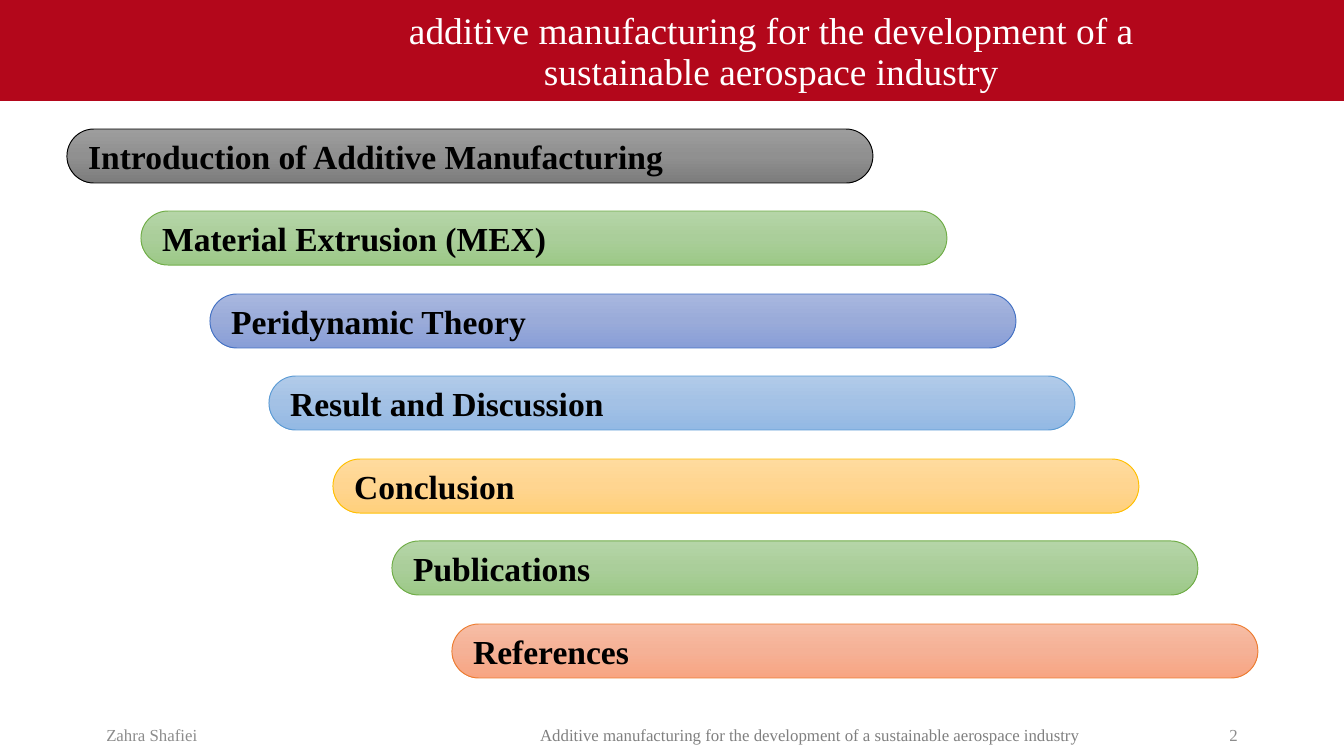
"""Build an agenda slide with a staircase of seven rounded bars."""
from copy import deepcopy

from pptx import Presentation, util as u
from pptx.dml.color import RGBColor
from pptx.enum import shapes, text

PX = 914400 / 134.4
FONT = "Times New Roman"
HEX = {"band": "B3071B", "white": "FFFFFF", "black": "000000",
       "pale": "8C8C8C", "gray": "808080"}
TONES = {
    "gray": ("000000", "9D9D9D", "909090", "7C7C7C"),
    "green": ("70AD47", "B5D5A7", "AACE9A", "9CC987"),
    "blue": ("4472C4", "A8B7DF", "9AABD9", "889ED7"),
    "sky": ("5B9BD5", "B1CBE9", "A3C1E5", "93B9E4"),
    "gold": ("FFC000", "FFDB9E", "FFD590", "FFD07C"),
    "coral": ("ED7D31", "F7BDA5", "F5B196", "F8A582"),
}
TITLE = "additive manufacturing for the development of a sustainable aerospace industry"
BARS = [
    ("Introduction of Additive Manufacturing", 67, "gray"),
    ("Material Extrusion (MEX)", 141, "green"),
    ("Peridynamic Theory", 210, "blue"),
    ("Result and Discussion", 269, "sky"),
    ("Conclusion", 333, "gold"),
    ("Publications", 392, "green"),
    ("References", 452, "coral"),
]
LEFT, MID, RIGHT = text.PP_ALIGN.LEFT, text.PP_ALIGN.CENTER, text.PP_ALIGN.RIGHT
FOOT = [
    ("Zahra Shafiei", 93, 359, LEFT, "pale"),
    ("Additive manufacturing for the development of a sustainable aerospace industry",
     477, 665, MID, "gray"),
    ("2", 1187, 64, RIGHT, "pale"),
]
TOP, LAST, WIDE, HIGH = 129, 624, 806, 54


def emu(*vals):
    return [round(v * PX) for v in vals]


def rgb(code):
    return RGBColor.from_string(code)


def write(shape, words, size, color, align, bold=False):
    frame = shape.text_frame
    frame.text = words
    frame.word_wrap = True
    frame.auto_size = text.MSO_AUTO_SIZE.NONE
    frame.vertical_anchor = text.MSO_ANCHOR.MIDDLE
    para = frame.paragraphs[0]
    para.alignment = align
    font = para.runs[0].font
    font.name, font.size, font.bold = FONT, u.Pt(size), bold
    font.color.rgb = rgb(HEX[color])
    return para


def shade(shape, tones):
    fill = shape.fill
    fill.gradient()
    fill.gradient_angle = 270
    first = shape._element.spPr.find(".//{*}gs")
    first.addnext(deepcopy(first))
    for stop, place, tone in zip(fill.gradient_stops, (0, 0.5, 1), tones):
        stop.position = place
        stop.color.rgb = rgb(tone)


def main():
    deck = Presentation()
    deck.slide_width, deck.slide_height = emu(1344, 756)
    slide = deck.slides.add_slide(deck.slide_layouts[5])
    items = slide.shapes

    band = items.add_shape(shapes.MSO_SHAPE.RECTANGLE, *emu(0, 0, 1344, 101))
    band.shadow.inherit = False
    band.fill.solid()
    band.fill.fore_color.rgb = rgb(HEX["band"])
    band.line.fill.background()
    title = items.title
    title._element.addprevious(band._element)
    title.left, title.top, title.width, title.height = emu(333, 18, 877, 70)
    write(title, TITLE, 20, "white", MID).line_spacing = 0.9

    for words, left, wide, align, color in FOOT:
        box = items.add_textbox(*emu(left, 715, wide, 40))
        write(box, words, 9, color, align)

    for i, (words, left, tone) in enumerate(BARS):
        top = TOP + i * (LAST - TOP) // (len(BARS) - 1)
        bar = items.add_shape(shapes.MSO_SHAPE.ROUNDED_RECTANGLE,
                              *emu(left, top, WIDE, HIGH))
        bar.adjustments[0] = 0.5
        bar.shadow.inherit = False
        edge, *tones = TONES[tone]
        shade(bar, tones)
        bar.line.color.rgb = rgb(edge)
        bar.line.width = u.Pt(0.5)
        write(bar, words, 18, "black", LEFT, True)

    deck.save("out.pptx")


if __name__ == "__main__":
    main()
